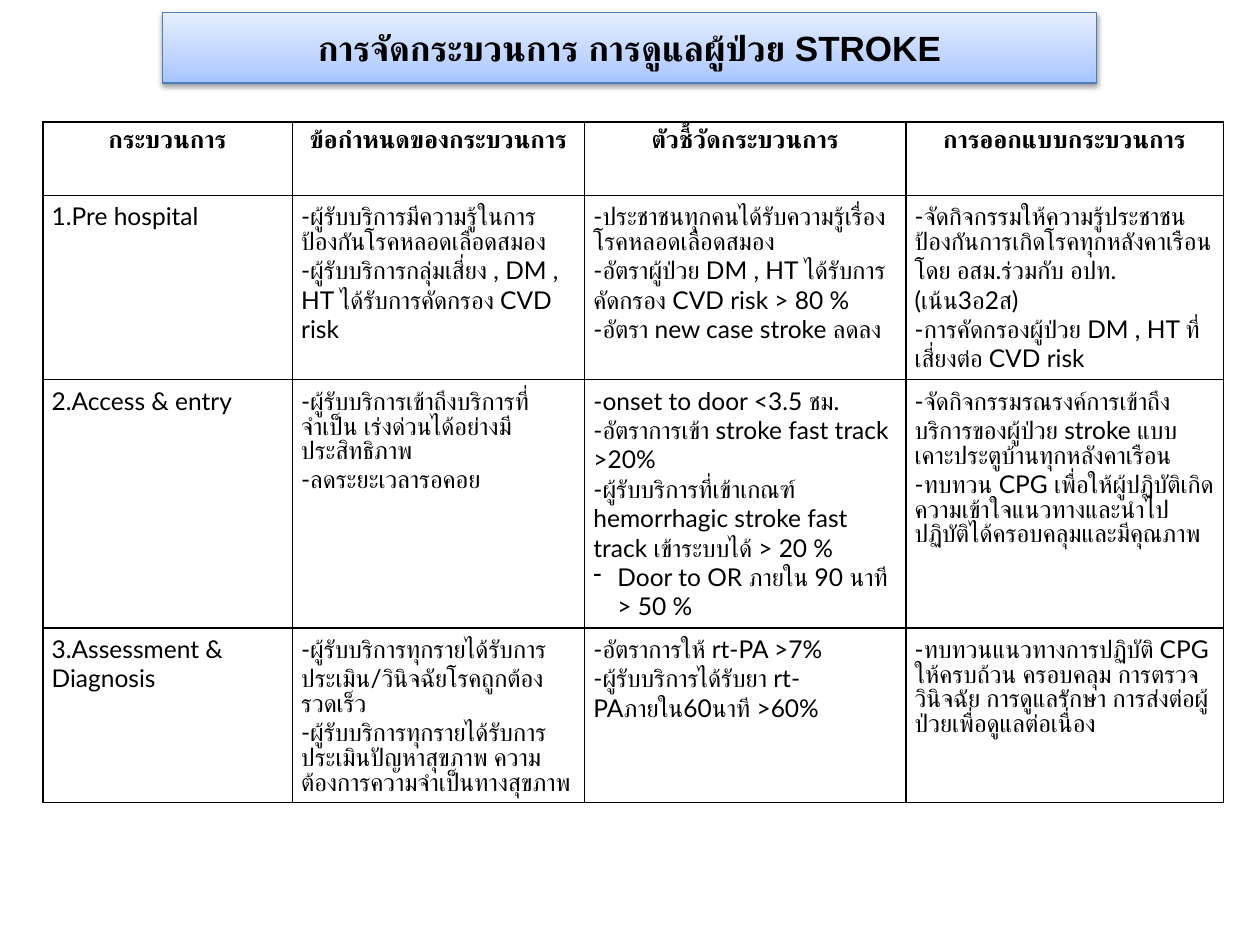
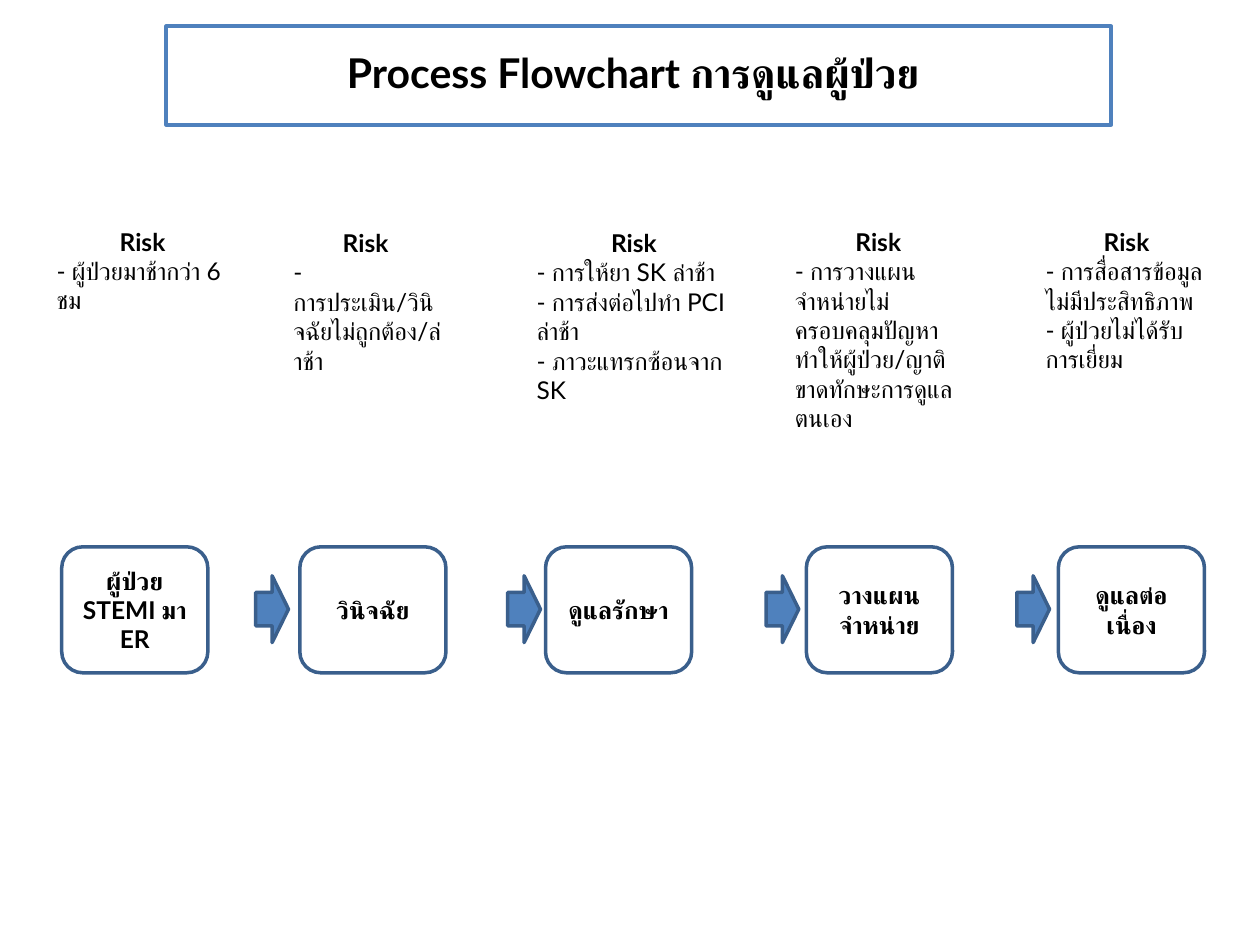
from lxml.etree import SubElement
from pptx import Presentation
from pptx.dml.color import RGBColor
from pptx.enum.shapes import MSO_SHAPE
from pptx.enum.text import MSO_ANCHOR, MSO_AUTO_SIZE, PP_ALIGN
from pptx.oxml import parse_xml
from pptx.oxml.ns import nsdecls, qn
from pptx.util import Inches, Pt

FONT = "Lato"
BLACK, BLUE, EDGE, RIM = "000000", "4F81BD", "3A5F8C", "4B7EBC"
SHADE = [(0, "A4C4FF"), (35, "BFD4FF"), (100, "E6EEFF")]

CARE_TITLE = "การจัดกระบวนการ การดูแลผู้ป่วย STROKE"
COLS = [1.98, 2.32, 2.55, 2.52]
ROWS = [0.58, 1.46, 1.97, 1.38]
HEADS = ["กระบวนการ", "ข้อกำหนดของกระบวนการ", "ตัวชี้วัดกระบวนการ", "การออกแบบกระบวนการ"]
# A tuple holds a bullet mark and its text.
STEPS = [
    [
        ["1.Pre hospital"],
        ["-ผู้รับบริการมีความรู้ในการป้องกันโรคหลอดเลือดสมอง",
         "-ผู้รับบริการกลุ่มเสี่ยง , DM , HT ได้รับการคัดกรอง CVD risk"],
        ["-ประชาชนทุกคนได้รับความรู้เรื่องโรคหลอดเลือดสมอง",
         "-อัตราผู้ป่วย DM , HT ได้รับการคัดกรอง CVD risk > 80 %",
         "-อัตรา new case stroke ลดลง"],
        ["-จัดกิจกรรมให้ความรู้ประชาชนป้องกันการเกิดโรคทุกหลังคาเรือน โดย อสม.ร่วมกับ อปท.(เน้น3อ2ส)",
         "-การคัดกรองผู้ป่วย DM , HT ที่เสี่ยงต่อ CVD risk"],
    ],
    [
        ["2.Access & entry"],
        ["-ผู้รับบริการเข้าถึงบริการที่จำเป็น เร่งด่วนได้อย่างมีประสิทธิภาพ",
         "-ลดระยะเวลารอคอย"],
        ["-onset to door <3.5 ชม.",
         "-อัตราการเข้า stroke fast track >20%",
         "-ผู้รับบริการที่เข้าเกณฑ์ hemorrhagic stroke fast track เข้าระบบได้ > 20 %",
         ("-", "Door to OR ภายใน 90 นาที > 50 %")],
        ["-จัดกิจกรรมรณรงค์การเข้าถึงบริการของผู้ป่วย stroke แบบเคาะประตูบ้านทุกหลังคาเรือน",
         "-ทบทวน CPG เพื่อให้ผู้ปฏิบัติเกิดความเข้าใจแนวทางและนำไปปฏิบัติได้ครอบคลุมและมีคุณภาพ"],
    ],
    [
        ["3.Assessment & Diagnosis"],
        ["-ผู้รับบริการทุกรายได้รับการประเมิน/วินิจฉัยโรคถูกต้อง รวดเร็ว",
         "-ผู้รับบริการทุกรายได้รับการประเมินปัญหาสุขภาพ ความต้องการความจำเป็นทางสุขภาพ"],
        ["-อัตราการให้ rt-PA >7%",
         "-ผู้รับบริการได้รับยา rt-PAภายใน60นาที >60%"],
        ["-ทบทวนแนวทางการปฏิบัติ CPG ให้ครบถ้วน ครอบคลุม การตรวจวินิจฉัย การดูแลรักษา การส่งต่อผู้ป่วยเพื่อดูแลต่อเนื่อง"],
    ],
]

FLOW_TITLE = "Process Flowchart การดูแลผู้ป่วย "
RISK = "Risk "
# Step name, box left, arrow left, risk box (left, top, width, height), risks
FLOW = [
    ("ผู้ป่วย STEMI มา ER", 0.49, None, (0.35, 1.75, 1.61, 1.04),
     ["- ผู้ป่วยมาช้ากว่า 6 ชม"]),
    ("วินิจฉัย", 2.38, 2.03, (2.23, 1.76, 1.39, 1.28),
     ["- การประเมิน/วินิจฉัยไม่ถูกต้อง/ล่าช้า"]),
    ("ดูแลรักษา", 4.33, 4.03, (4.16, 1.76, 1.79, 1.75),
     ["- การให้ยา SK ล่าช้า", "- การส่งต่อไปทำ PCI ล่าช้า", "- ภาวะแทรกซ้อนจาก SK"]),
    ("วางแผนจำหน่าย", 6.4, 6.08, (6.21, 1.75, 1.57, 1.75),
     ["- การวางแผนจำหน่ายไม่ครอบคลุมปัญหาทำให้ผู้ป่วย/ญาติขาดทักษะการดูแลตนเอง"]),
    ("ดูแลต่อเนื่อง", 8.4, 8.07, (8.2, 1.75, 1.53, 1.51),
     ["- การสื่อสารข้อมูลไม่มีประสิทธิภาพ", "- ผู้ป่วยไม่ได้รับการเยี่ยม"]),
]


def color(code):
    return RGBColor.from_string(code)


def style(para, size=14, bold=False, font=FONT):
    """Format a paragraph; bold ones are centred headings."""
    para.alignment = PP_ALIGN.CENTER if bold else PP_ALIGN.LEFT
    for run in para.runs:
        run.font.size, run.font.bold, run.font.name = Pt(size), bold, font
        run.font.color.rgb = color(BLACK)


def bullet(para, mark):
    props = para._p.get_or_add_pPr()
    props.set("marL", str(Inches(0.19)))
    props.set("indent", str(-Inches(0.19)))
    SubElement(props, qn("a:buChar")).set("char", mark)


def write(frame, lines, bold=False):
    frame.word_wrap = True
    for i, line in enumerate(lines):
        para = frame.add_paragraph() if i else frame.paragraphs[0]
        mark, text = line if isinstance(line, tuple) else (None, line)
        para.text = text
        style(para, bold=bold)
        if mark:
            bullet(para, mark)


def shape(slide, kind, box, edge, width, fill=None, text=None, **look):
    item = slide.shapes.add_shape(kind, *map(Inches, box))
    item.shadow.inherit = False
    item.line.color.rgb, item.line.width = color(edge), Pt(width)
    if fill:
        item.fill.solid()
        item.fill.fore_color.rgb = color(fill)
    else:
        item.fill.background()
    if text:
        frame = item.text_frame
        frame.word_wrap, frame.vertical_anchor = True, MSO_ANCHOR.MIDDLE
        frame.paragraphs[0].text = text
        style(frame.paragraphs[0], bold=True, **look)
    return item


def gloss(item):
    """Give a shape the upward gradient and a soft shadow."""
    props = item._element.spPr
    stops = "".join(f'<a:gs pos="{pos * 1000}"><a:srgbClr val="{code}"/></a:gs>'
                    for pos, code in SHADE)
    props.replace(props.find(qn("a:noFill")), parse_xml(
        f'<a:gradFill {nsdecls("a")} rotWithShape="1"><a:gsLst>{stops}</a:gsLst>'
        '<a:lin ang="16200000" scaled="0"/></a:gradFill>'))
    props.find(qn("a:effectLst")).append(parse_xml(
        f'<a:outerShdw {nsdecls("a")} blurRad="{Pt(3.1)}" dist="{Pt(1.6)}" '
        f'dir="5400000" rotWithShape="0"><a:srgbClr val="{BLACK}">'
        '<a:alpha val="38000"/></a:srgbClr></a:outerShdw>'))


def border(cell):
    props = cell._tc.get_or_add_tcPr()
    for i, side in enumerate("LRTB"):
        props.insert(i, parse_xml(
            f'<a:ln{side} {nsdecls("a")} w="{Pt(1)}"><a:solidFill>'
            f'<a:srgbClr val="{BLACK}"/></a:solidFill></a:ln{side}>'))


def grid(slide):
    rows = [[[head] for head in HEADS]] + STEPS
    box = map(Inches, (0.34, 0.97, sum(COLS), sum(ROWS)))
    table = slide.shapes.add_table(len(rows), len(COLS), *box).table
    table.first_row = table.horz_banding = False
    for col, width in zip(table.columns, COLS):
        col.width = Inches(width)
    for r, (row, high) in enumerate(zip(rows, ROWS)):
        table.rows[r].height = Inches(high)
        for c, lines in enumerate(row):
            cell = table.cell(r, c)
            cell.margin_left = cell.margin_right = Inches(0.07)
            cell.margin_top = cell.margin_bottom = Inches(0.05)
            cell.fill.background()
            border(cell)
            write(cell.text_frame, lines, bold=r == 0)


def care(slide):
    gloss(shape(slide, MSO_SHAPE.RECTANGLE, (1.29, 0.1, 7.41, 0.56), RIM, 0.75,
                text=CARE_TITLE, size=20, font="Arial"))
    grid(slide)


def flow(slide):
    title = shape(slide, MSO_SHAPE.RECTANGLE, (1.32, 0.21, 7.5, 0.78), BLUE, 2.25,
                  text=FLOW_TITLE, size=23.4)
    title.text_frame.paragraphs[0].line_spacing = 0.9
    for name, left, arrow, box, risks in FLOW:
        shape(slide, MSO_SHAPE.ROUNDED_RECTANGLE, (left, 4.34, 1.16, 1), EDGE, 2, text=name)
        note = slide.shapes.add_textbox(*map(Inches, box)).text_frame
        write(note, [RISK] + risks)
        style(note.paragraphs[0], bold=True)
        note.auto_size = MSO_AUTO_SIZE.SHAPE_TO_FIT_TEXT
        if arrow:
            shape(slide, MSO_SHAPE.RIGHT_ARROW, (arrow, 4.57, 0.26, 0.53), EDGE, 2, BLUE)


def main():
    deck = Presentation()
    deck.slide_width, deck.slide_height = Inches(10), Inches(7.5)
    for draw in (care, flow):
        draw(deck.slides.add_slide(deck.slide_layouts[6]))
    deck.save("out.pptx")


if __name__ == "__main__":
    main()
